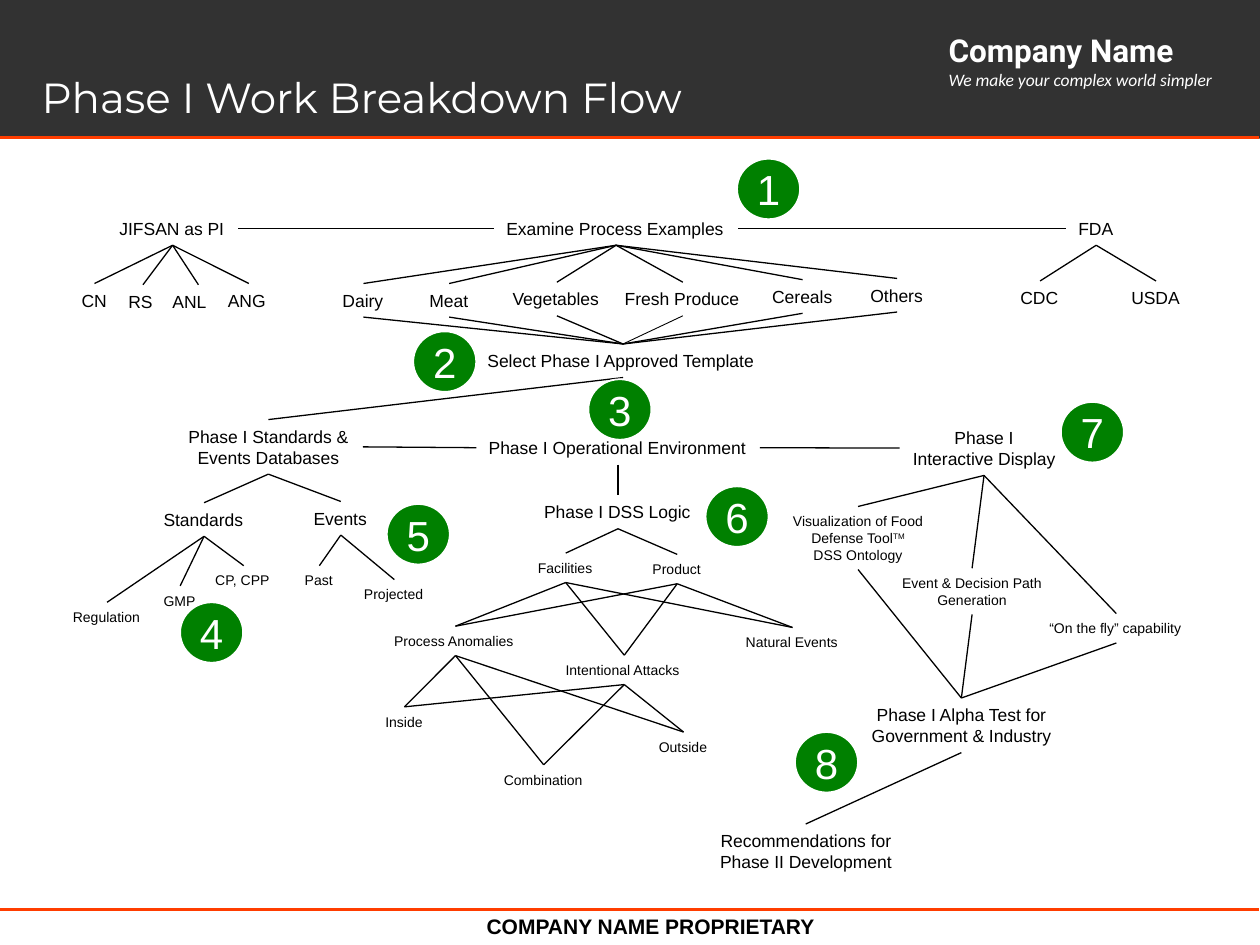
from dataclasses import dataclass

from lxml import etree
from pptx import Presentation
from pptx.dml.color import RGBColor
from pptx.enum.shapes import MSO_CONNECTOR, MSO_SHAPE
from pptx.enum.text import MSO_ANCHOR, MSO_AUTO_SIZE, PP_ALIGN
from pptx.oxml.ns import qn
from pptx.util import Inches, Pt

STRAIGHT = MSO_CONNECTOR.STRAIGHT
RECTANGLE, OVAL = MSO_SHAPE.RECTANGLE, MSO_SHAPE.OVAL
TOP, MIDDLE, BOTTOM = MSO_ANCHOR.TOP, MSO_ANCHOR.MIDDLE, MSO_ANCHOR.BOTTOM
LEFT, CENTER = PP_ALIGN.LEFT, PP_ALIGN.CENTER
GROW, FIXED = MSO_AUTO_SIZE.SHAPE_TO_FIT_TEXT, MSO_AUTO_SIZE.NONE

WIDTH, HEIGHT = Inches(10), Inches(7.5)
COLUMNS, ROWS = 100, 75
BLACK, WHITE, CHARCOAL, ORANGE, GREEN = "000000", "FFFFFF", "323232", "FF3D00", "008000"


@dataclass
class Topic:
    label: str
    col: float
    row: float
    cols: float
    size: int = 10
    lines: int = 1

    @property
    def rows(self) -> float:
        return 1 + self.lines * self.size / 6

    @property
    def middle(self) -> float:
        return self.row + self.rows / 2

    @property
    def center(self) -> float:
        return self.col + self.cols / 2


@dataclass
class Step:
    number: int
    col: float
    row: float


TOPICS = {
    "examine": Topic("Examine Process Examples", 39.2, 16.8, 19.4),
    "dairy": Topic("Dairy", 26.2, 22.5, 5.3),
    "meat": Topic("Meat", 33.1, 22.5, 5.1),
    "vegetables": Topic("Vegetables", 39.7, 22.4, 9),
    "produce": Topic("Fresh Produce", 48.6, 22.4, 11.2),
    "cereals": Topic("Cereals", 60.3, 22.2, 6.8),
    "others": Topic("Others", 68.1, 22.1, 6.2),
    "template": Topic("Select Phase I Approved Template", 37.7, 27.3, 23.5),
    "fda": Topic("FDA", 84.6, 16.8, 4.8),
    "cdc": Topic("CDC", 80, 22.3, 5.1),
    "usda": Topic("USDA", 88.8, 22.3, 5.9),
    "jifsan": Topic("JIFSAN as PI", 8.5, 16.8, 10.4),
    "cn": Topic("CN", 5.5, 22.5, 4),
    "rs": Topic("RS", 9.2, 22.6, 4.3),
    "anl": Topic("ANL", 12.7, 22.6, 6.1),
    "ang": Topic("ANG", 17.1, 22.5, 5.3),
    "databases": Topic("Phase I Standards & Events Databases", 13.8, 33.3, 15, lines=2),
    "standards": Topic("Standards", 12, 39.9, 8.4),
    "events": Topic("Events", 23.9, 39.8, 6.3),
    "regulation": Topic("Regulation", 4.8, 47.8, 7.4, 8),
    "gmp": Topic("GMP", 12, 46.5, 4.6, 8),
    "cp": Topic("CP, CPP", 16.1, 44.9, 6.5, 8),
    "past": Topic("Past", 23.2, 44.9, 4.3, 8),
    "projected": Topic("Projected", 27.9, 46, 6.8, 8),
    "environment": Topic("Phase I Operational Environment", 37.8, 34.2, 22.5),
    "logic": Topic("Phase I DSS Logic", 42.2, 39.3, 13.7),
    "facilities": Topic("Facilities", 41.7, 43.9, 6.4, 8),
    "product": Topic("Product", 50.8, 44, 5.9, 8),
    "anomalies": Topic("Process Anomalies", 30.3, 49.7, 11.7, 8),
    "attacks": Topic("Intentional Attacks", 43.9, 52, 11.3, 8),
    "natural": Topic("Natural Events", 58.2, 49.8, 9.4, 8),
    "inside": Topic("Inside", 29.6, 56.1, 5, 8),
    "outside": Topic("Outside", 51.3, 58.1, 5.9, 8),
    "combination": Topic("Combination", 39, 60.7, 8.3, 8),
    "display": Topic("Phase I\nInteractive Display", 71.4, 33.4, 13.4, lines=2),
    "ontology": Topic("Visualization of Food Defense Tool^TM^\nDSS Ontology", 60.7, 40.2, 14.8, 8, 3),
    "decisions": Topic("Event & Decision Path Generation", 69.8, 45.1, 14.7, 8, 2),
    "fly": Topic("“On the fly” capability", 82.3, 48.7, 12.6, 8),
    "alpha": Topic("Phase I Alpha Test for Government & Industry", 65, 55.4, 22.6, lines=2),
    "recommendations": Topic("Recommendations for Phase II Development", 54.9, 65.4, 18.1, lines=2),
}

EXAMPLES = "dairy meat vegetables produce cereals others"
BRANCHES = {
    "examine": EXAMPLES,
    **dict.fromkeys(EXAMPLES.split(), "template"),
    "template": "databases",
    "jifsan": "cn rs anl ang",
    "fda": "cdc usda",
    "databases": "standards events",
    "standards": "regulation gmp cp",
    "events": "past projected",
    "environment": "logic",
    "logic": "facilities product",
    "facilities": "anomalies attacks natural",
    "product": "anomalies attacks natural",
    "anomalies": "inside combination outside",
    "attacks": "inside combination outside",
    "display": "ontology decisions fly",
    "ontology": "alpha",
    "decisions": "alpha",
    "fly": "alpha",
    "alpha": "recommendations",
}
NEIGHBORS = [("jifsan", "examine"), ("examine", "fda"),
             ("databases", "environment"), ("environment", "display")]
STEPS = [Step(1, 58.5, 12.6), Step(2, 32.8, 26.3), Step(3, 46.7, 30.1), Step(4, 14.3, 47.8),
         Step(5, 30.7, 40), Step(6, 56, 38.6), Step(7, 84.2, 31.9), Step(8, 63.1, 58.1)]


def across(cols: float) -> int:
    return round(WIDTH * cols / COLUMNS)


def down(rows: float) -> int:
    return round(HEIGHT * rows / ROWS)


def area(col: float, row: float, cols: float, rows: float) -> tuple:
    return across(col), down(row), across(cols), down(rows)


def paint(color_format, color: str) -> None:
    color_format.rgb = RGBColor.from_string(color)


def write(paragraph, text: str, *, size: int, font="Arial", color=BLACK,
          bold=False, italic=False, align=LEFT) -> None:
    paragraph.alignment = align
    for index, part in enumerate(text.split("^")):
        if not part:
            continue
        run = paragraph.add_run()
        run.text = part
        run.font.name, run.font.size = font, Pt(size)
        run.font.bold, run.font.italic = bold, italic
        paint(run.font.color, color)
        if index % 2:
            run.font._element.set("baseline", "30000")


def add_label(slide, place: tuple, wrap=False, anchor=TOP, fit=GROW):
    frame = slide.shapes.add_textbox(*place).text_frame
    frame.word_wrap, frame.vertical_anchor, frame.auto_size = wrap, anchor, fit
    return frame


def add_line(slide, start: tuple, end: tuple, color=BLACK, weight=0.75) -> None:
    line = slide.shapes.add_connector(STRAIGHT, across(start[0]), down(start[1]),
                                      across(end[0]), down(end[1]))
    paint(line.line.color, color)
    line.line.width = Pt(weight)
    etree.SubElement(line._element.spPr, qn("a:effectLst"))


def add_filled(slide, kind, place: tuple, color: str):
    shape = slide.shapes.add_shape(kind, *place)
    shape.shadow.inherit = False
    shape.fill.solid()
    paint(shape.fill.fore_color, color)
    return shape


def add_frame(slide) -> None:
    add_filled(slide, RECTANGLE, area(0, 0, COLUMNS, 11), CHARCOAL).line.fill.background()
    for row in (10.9, 72.2):
        add_line(slide, (0, row), (99.9, row), ORANGE, 2)
    owner = add_label(slide, area(74.3, 2, 23, 5.7))
    write(owner.paragraphs[0], "Company Name", size=18, font="Roboto", color=WHITE, bold=True)
    write(owner.add_paragraph(), "We make your complex world simpler", size=10,
          font="Calibri", color=WHITE, italic=True)
    footer = add_label(slide, area(32.5, 69.8, 38.3, 5.2), True, BOTTOM, FIXED)
    write(footer.paragraphs[0], "COMPANY NAME PROPRIETARY", size=12, bold=True, align=CENTER)


def place_title(slide) -> None:
    title = slide.shapes.title
    title.left, title.top, title.width, title.height = area(3.3, 1.1, 67, 9.1)
    frame = title.text_frame
    frame.margin_left, frame.vertical_anchor, frame.auto_size = 0, BOTTOM, FIXED
    frame.paragraphs[0].line_spacing = 0.85
    write(frame.paragraphs[0], "Phase I Work Breakdown Flow", size=24,
          font="Montserrat", color=WHITE)
    slide.shapes._spTree.append(title._element)


def add_topic(slide, topic: Topic) -> None:
    stacked = topic.lines > 1
    frame = add_label(slide, area(topic.col, topic.row, topic.cols, topic.rows), stacked)
    for index, text in enumerate(topic.label.split("\n")):
        paragraph = frame.add_paragraph() if index else frame.paragraphs[0]
        write(paragraph, text, size=topic.size, align=CENTER if stacked else LEFT)


def add_step(slide, step: Step) -> None:
    badge = add_filled(slide, OVAL, area(step.col, step.row, 5, 4.8), GREEN)
    paint(badge.line.color, WHITE)
    badge.line.width = Pt(1)
    frame = badge.text_frame
    frame.word_wrap, frame.vertical_anchor = False, MIDDLE
    write(frame.paragraphs[0], str(step.number), size=24, color=WHITE, align=CENTER)


def main() -> None:
    deck = Presentation()
    deck.slide_width, deck.slide_height = WIDTH, HEIGHT
    slide = deck.slides.add_slide(deck.slide_layouts[5])
    add_frame(slide)
    place_title(slide)
    for source, targets in BRANCHES.items():
        parent = TOPICS[source]
        for target in targets.split():
            child = TOPICS[target]
            add_line(slide, (parent.center, parent.row + parent.rows), (child.center, child.row),
                     weight=0.5 if source == "produce" else 0.75)
    for before, after in NEIGHBORS:
        first, second = TOPICS[before], TOPICS[after]
        add_line(slide, (first.col + first.cols, first.middle), (second.col, second.middle))
    for topic in TOPICS.values():
        add_topic(slide, topic)
    for step in STEPS:
        add_step(slide, step)
    deck.save("out.pptx")


if __name__ == "__main__":
    main()
